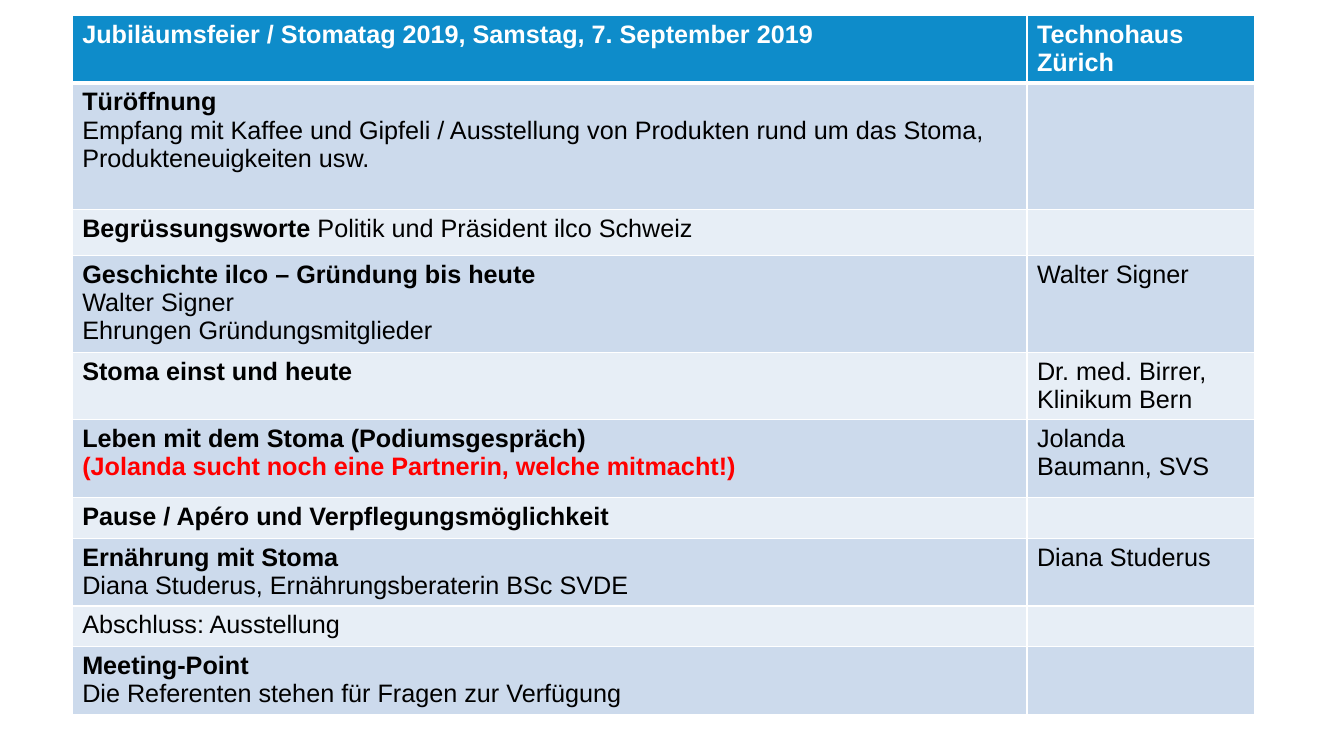
from dataclasses import dataclass

from lxml.etree import SubElement
from pptx import Presentation
from pptx.dml.color import RGBColor
from pptx.oxml.ns import qn
from pptx.table import _Cell
from pptx.text.text import _Paragraph
from pptx.util import Cm, Pt


@dataclass(frozen=True)
class Theme:
    font: str = "Arial"
    size: float = 18
    header: str = "0E8CCA"
    odd_row: str = "CCDAEC"
    even_row: str = "E7EEF6"
    white: str = "FFFFFF"
    black: str = "000000"
    alert: str = "FF0000"
    border: float = 1
    header_border: float = 3


THEME = Theme()


@dataclass(frozen=True)
class Phrase:
    text: str
    bold: bool = False
    color: str = THEME.black


Paragraphs = tuple[tuple[Phrase, ...], ...]


@dataclass(frozen=True)
class Item:
    height: float
    topic: Paragraphs
    speaker: Paragraphs = ()


def title(text: str, color: str = THEME.black) -> Phrase:
    return Phrase(text, True, color)


def person(name: str) -> Paragraphs:
    return ((Phrase(name),),)


AGENDA = (
    Item(1.70,
         ((title("Jubiläumsfeier / Stomatag 2019, Samstag, 7. September 2019", THEME.white),),),
         ((title("Technohaus Zürich", THEME.white),),)),
    Item(3.18,
         ((title("Türöffnung\n"),
           Phrase("Empfang mit Kaffee und Gipfeli / Ausstellung von Produkten rund um "
                  "das Stoma, Produkteneuigkeiten usw.")),)),
    Item(1.17, ((title("Begrüssungsworte"), Phrase(" Politik und Präsident ilco Schweiz")),)),
    Item(2.44,
         ((title("Geschichte ilco – Gründung bis heute\n"),
           Phrase("Walter Signer\nEhrungen Gründungsmitglieder")),),
         person("Walter Signer")),
    Item(1.70, ((title("Stoma einst und heute"),),), person("Dr. med. Birrer, Klinikum Bern")),
    Item(1.96,
         ((title("Leben mit dem Stoma (Podiumsgespräch)"),),
          (title("(Jolanda sucht noch eine Partnerin, welche mitmacht!)", THEME.alert),)),
         person("Jolanda Baumann, SVS")),
    Item(0.97, ((title("Pause / Apéro und Verpflegungsmöglichkeit"),),)),
    Item(1.70,
         ((title("Ernährung mit Stoma"),),
          (Phrase("Diana Studerus, Ernährungsberaterin BSc SVDE"),)),
         person("Diana Studerus")),
    Item(0.97, ((Phrase("Abschluss: Ausstellung"),),)),
    Item(1.70,
         ((title("Meeting-Point"),),
          (Phrase("Die Referenten stehen für Fragen zur Verfügung"),))),
)
COLUMN_WIDTHS = (24.06, 5.74)


def add_text(paragraph: _Paragraph, text: str, *, bold: bool, color: str) -> None:
    for index, line in enumerate(text.split("\n")):
        if index:
            paragraph.add_line_break()
        if line:
            run = paragraph.add_run()
            run.text = line
            run.font.name = THEME.font
            run.font.size = Pt(THEME.size)
            run.font.bold = bold
            run.font.color.rgb = RGBColor.from_string(color)


def set_borders(cell: _Cell, top: float, bottom: float) -> None:
    properties = cell._tc.get_or_add_tcPr()
    widths = {"a:lnL": THEME.border, "a:lnR": THEME.border, "a:lnT": top, "a:lnB": bottom}
    for side, width in widths.items():
        line = SubElement(properties, qn(side), w=str(Pt(width)))
        fill = SubElement(line, qn("a:solidFill"))
        SubElement(fill, qn("a:srgbClr"), val=THEME.white)


def fill_cell(cell: _Cell, content: Paragraphs, row: int) -> None:
    set_borders(cell,
                THEME.header_border if row == 1 else THEME.border,
                THEME.header_border if row == 0 else THEME.border)
    background = THEME.odd_row if row % 2 else THEME.even_row
    cell.fill.solid()
    cell.fill.fore_color.rgb = RGBColor.from_string(background if row else THEME.header)
    frame = cell.text_frame
    frame.paragraphs[0].font.size = Pt(THEME.size)
    for index, phrases in enumerate(content):
        paragraph = frame.add_paragraph() if index else frame.paragraphs[0]
        for phrase in phrases:
            add_text(paragraph, phrase.text, bold=phrase.bold, color=phrase.color)


def main() -> None:
    presentation = Presentation()
    presentation.slide_width = Cm(33.87)
    presentation.slide_height = Cm(19.05)
    slide = presentation.slides.add_slide(presentation.slide_layouts[6])
    total_height = sum(item.height for item in AGENDA)
    programme = slide.shapes.add_table(
        len(AGENDA), len(COLUMN_WIDTHS),
        Cm(1.82), Cm(0.39), Cm(sum(COLUMN_WIDTHS)), Cm(total_height)).table
    for column, width in zip(programme.columns, COLUMN_WIDTHS):
        column.width = Cm(width)
    for row, item in enumerate(AGENDA):
        programme.rows[row].height = Cm(item.height)
        for column, content in enumerate((item.topic, item.speaker)):
            fill_cell(programme.cell(row, column), content, row)
    presentation.save("out.pptx")


if __name__ == "__main__":
    main()
